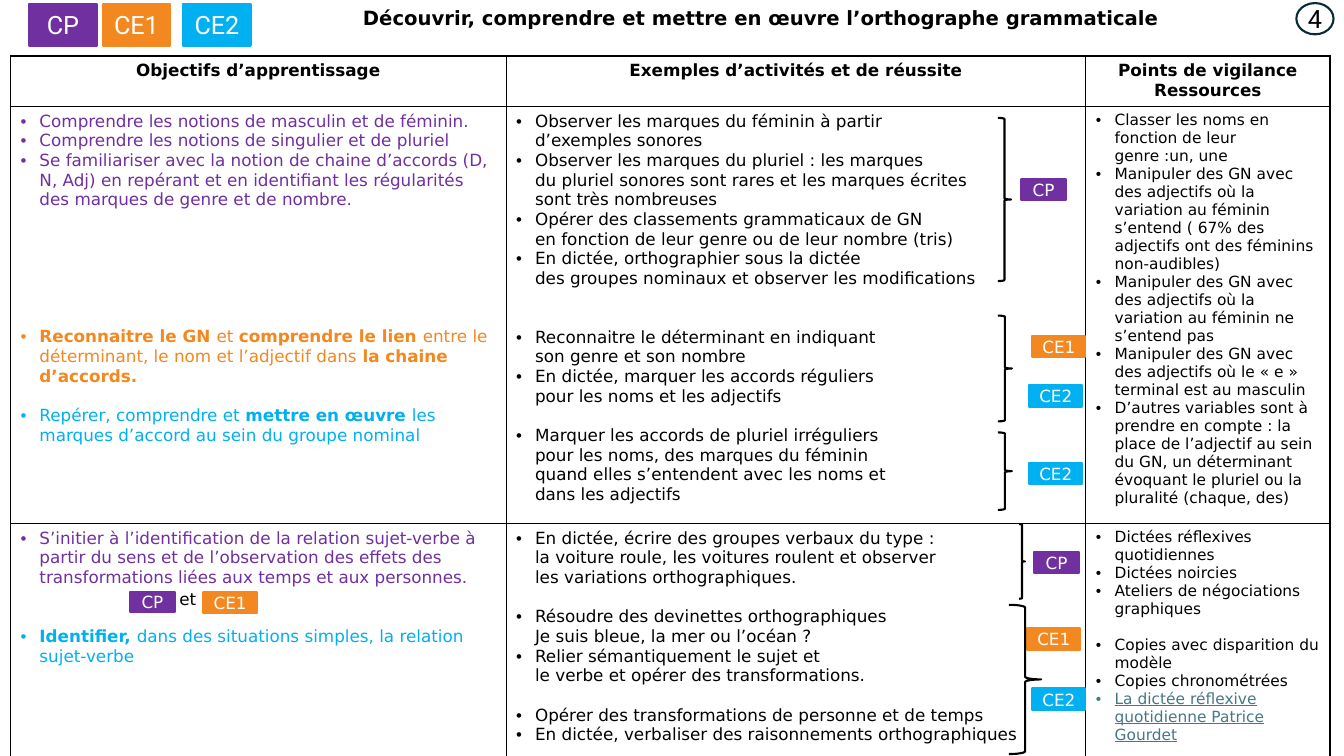
from lxml import etree
from pptx import Presentation
from pptx.dml.color import RGBColor
from pptx.enum.shapes import MSO_SHAPE
from pptx.enum.text import MSO_ANCHOR, MSO_AUTO_SIZE, PP_ALIGN
from pptx.oxml.ns import qn
from pptx.util import Pt

RECTANGLE, OVAL, BRACE = MSO_SHAPE.RECTANGLE, MSO_SHAPE.OVAL, MSO_SHAPE.RIGHT_BRACE
TOP, MIDDLE = MSO_ANCHOR.TOP, MSO_ANCHOR.MIDDLE
CENTER, LEFT = PP_ALIGN.CENTER, PP_ALIGN.LEFT
NO_AUTOFIT = MSO_AUTO_SIZE.NONE

BLACK = RGBColor(0x00, 0x00, 0x00)
WHITE = RGBColor(0xFF, 0xFF, 0xFF)
PURPLE = RGBColor(0x70, 0x30, 0xA0)
ORANGE = RGBColor(0xF2, 0x88, 0x1F)
BLUE = RGBColor(0x00, 0xB0, 0xF0)
NAVY = RGBColor(0x09, 0x2A, 0x39)
LINK = RGBColor(0x46, 0x78, 0x86)

BODY_FONT, TAG_FONT = "DejaVu Sans", "Roboto"
LINE_RATIO = 1.164
HANG = 13.5
GRADES = {"CP": PURPLE, "CE1": ORANGE, "CE2": BLUE}
COLUMNS = [354, 414, 174.5]
ROWS = [36, 298, 168.5]
HEADERS = ["Objectifs d’apprentissage", "Exemples d’activités et de réussite",
           "Points de vigilance\nRessources"]

# Each item is (text, colour, blank lines above); ** switches bold, \n breaks the line.
CELLS = [
    [
        [("Comprendre les notions de masculin et de féminin.", PURPLE, 0),
         ("Comprendre les notions de singulier et de pluriel", PURPLE, 0),
         ("Se familiariser avec la notion de chaine d’accords (D, N, Adj) en repérant et en "
          "identifiant les régularités des marques de genre et de nombre.", PURPLE, 0),
         ("**Reconnaitre le GN **et **comprendre le lien **entre le déterminant, le nom et "
          "l’adjectif dans **la chaine d’accords.", ORANGE, 6),
         ("Repérer, comprendre et **mettre en œuvre **les marques d’accord au sein du groupe "
          "nominal", BLUE, 1)],
        [("Observer les marques du féminin à partir\nd’exemples sonores", BLACK, 0),
         ("Observer les marques du pluriel : les marques\ndu pluriel sonores sont rares et les "
          "marques écrites\nsont très nombreuses", BLACK, 0),
         ("Opérer des classements grammaticaux de GN\nen fonction de leur genre ou de leur "
          "nombre (tris)", BLACK, 0),
         ("En dictée, orthographier sous la dictée\ndes groupes nominaux et observer les "
          "modifications", BLACK, 0),
         ("Reconnaitre le déterminant en indiquant\nson genre et son nombre", BLACK, 2),
         ("En dictée, marquer les accords réguliers\npour les noms et les adjectifs", BLACK, 0),
         ("Marquer les accords de pluriel irréguliers\npour les noms, des marques du féminin\n"
          "quand elles s’entendent avec les noms et\ndans les adjectifs", BLACK, 1)],
        [("Classer les noms en fonction de leur genre :un, une", BLACK, 0),
         ("Manipuler des GN avec des adjectifs où la variation au féminin s’entend ( 67% des "
          "adjectifs ont des féminins non-audibles)", BLACK, 0),
         ("Manipuler des GN avec des adjectifs où la variation au féminin ne s’entend pas",
          BLACK, 0),
         ("Manipuler des GN avec des adjectifs où le « e » terminal est au masculin", BLACK, 0),
         ("D’autres variables sont à prendre en compte : la place de l’adjectif au sein du GN, "
          "un déterminant évoquant le pluriel ou la pluralité (chaque, des)", BLACK, 0)],
    ],
    [
        [("S’initier à l’identification de la relation sujet-verbe à partir du sens et de "
          "l’observation des effets des transformations liées aux temps et aux personnes.",
          PURPLE, 0),
         ("**Identifier, **dans des situations simples, la relation sujet-verbe", BLUE, 2)],
        [("En dictée, écrire des groupes verbaux du type :\nla voiture roule, les voitures "
          "roulent et observer\nles variations orthographiques.", BLACK, 0),
         ("Résoudre des devinettes orthographiques\nJe suis bleue, la mer ou l’océan ?",
          BLACK, 1),
         ("Relier sémantiquement le sujet et\nle verbe et opérer des transformations.",
          BLACK, 0),
         ("Opérer des transformations de personne et de temps", BLACK, 1),
         ("En dictée, verbaliser des raisonnements orthographiques", BLACK, 0)],
        [("Dictées réflexives quotidiennes", BLACK, 0),
         ("Dictées noircies", BLACK, 0),
         ("Ateliers de négociations graphiques", BLACK, 0),
         ("Copies avec disparition du modèle", BLACK, 1),
         ("Copies chronométrées", BLACK, 0),
         ("La dictée réflexive quotidienne Patrice Gourdet", LINK, 0)],
    ],
]

HEADER_TAGS = [("CP", 21), ("CE1", 73.5), ("CE2", 131)]
SMALL_TAGS = [("CE1", 737.3, 239.8), ("CE2", 735.1, 275), ("CP", 729.4, 128.2),
              ("CE2", 735.1, 330.5), ("CE1", 733.7, 448.5), ("CE2", 737.3, 491.8),
              ("CP", 92.9, 422.6), ("CE1", 145.4, 422.6), ("CP", 738.7, 394.6)]
BRACES = [(712.8, 84.2, 9.4, 116.6), (712.8, 225.4, 10, 75.6), (712.8, 308.9, 10, 55.4),
          (727.9, 374.4, 4.3, 53.3), (720.7, 432, 23, 106.6)]


def set_font(para, size, color, bold=None, name=BODY_FONT):
    """Set the font shared by all runs of a paragraph."""
    para.font.name = name
    para.font.size = Pt(size)
    para.font.color.rgb = color
    para.font.bold = bold


def add_bullet(para):
    """Give a paragraph a hanging round bullet."""
    props = para._p.get_or_add_pPr()
    props.set("marL", str(Pt(HANG)))
    props.set("indent", str(-Pt(HANG)))
    etree.SubElement(props, qn("a:buFont")).set("typeface", "Arial")
    etree.SubElement(props, qn("a:buChar")).set("char", "•")


def add_spans(para, text):
    """Write text with its line breaks and bold parts."""
    for part_number, part in enumerate(text.split("**")):
        for line_number, line in enumerate(part.split("\n")):
            if line_number:
                para.add_line_break()
            if line:
                span = para.add_run()
                span.text = line
                if "**" in text:
                    span.font.bold = part_number % 2 == 1


def fill_list(frame, items, size):
    """Fill a cell with bulleted items."""
    for number, (text, color, gap) in enumerate(items):
        para = frame.add_paragraph() if number else frame.paragraphs[0]
        if gap:
            para.space_before = Pt(round(gap * size * LINE_RATIO, 1))
        add_bullet(para)
        add_spans(para, text)
        set_font(para, size, color)
        if color == LINK:
            para.font.underline = True


def style_cell(cell):
    """Draw thin black borders around a clear cell."""
    props = cell._tc.get_or_add_tcPr()
    for side in ("a:lnL", "a:lnR", "a:lnT", "a:lnB"):
        border = etree.SubElement(props, qn(side), w=str(Pt(1)))
        fill = etree.SubElement(border, qn("a:solidFill"))
        etree.SubElement(fill, qn("a:srgbClr")).set("val", str(BLACK))
    cell.fill.background()


def add_grid(page):
    """Add the table of objectives, activities and resources."""
    table = page.shapes.add_table(len(ROWS), len(COLUMNS), Pt(7.5), Pt(40),
                                  Pt(sum(COLUMNS)), Pt(sum(ROWS))).table
    table.first_row = table.horz_banding = False
    for column, width in zip(table.columns, COLUMNS):
        column.width = Pt(width)
    for row, height in zip(table.rows, ROWS):
        row.height = Pt(height)
    for cell in table.iter_cells():
        style_cell(cell)
    for column, header in enumerate(HEADERS):
        frame = table.cell(0, column).text_frame
        frame.text = header
        for para in frame.paragraphs:
            para.alignment = CENTER
            set_font(para, 12, BLACK, True)
    for row, row_cells in enumerate(CELLS, 1):
        for column, items in enumerate(row_cells):
            fill_list(table.cell(row, column).text_frame, items, 11 if column == 2 else 12)


def add_outline(page, kind, left, top, width, height, color):
    """Add an unfilled shape with a coloured outline."""
    shape = page.shapes.add_shape(kind, Pt(left), Pt(top), Pt(width), Pt(height))
    shape.shadow.inherit = False
    shape.fill.background()
    shape.line.color.rgb = color
    shape.line.width = Pt(1.5)
    return shape


def add_label(shape, text, size, color, name):
    """Centre a short text in a shape."""
    frame = shape.text_frame
    frame.word_wrap = False
    frame.vertical_anchor = MIDDLE
    frame.margin_left = frame.margin_right = frame.margin_top = frame.margin_bottom = 0
    frame.text = text
    frame.paragraphs[0].alignment = CENTER
    set_font(frame.paragraphs[0], size, color, name=name)


def add_tag(page, grade, left, top, width, height, size, name):
    """Add the coloured tag of a school grade."""
    tag = add_outline(page, RECTANGLE, left, top, width, height, GRADES[grade])
    tag.fill.solid()
    tag.fill.fore_color.rgb = GRADES[grade]
    add_label(tag, grade, size, WHITE, name)


def place_text(box, text, left, top, width, height, size, align, bold=None):
    """Position a text box or placeholder and write its line."""
    box.left, box.top, box.width, box.height = Pt(left), Pt(top), Pt(width), Pt(height)
    frame = box.text_frame
    frame.word_wrap = True
    frame.auto_size = NO_AUTOFIT
    frame.vertical_anchor = TOP
    frame.text = text
    frame.paragraphs[0].alignment = align
    set_font(frame.paragraphs[0], size, BLACK, bold)


def main():
    """Build and save the slide."""
    deck = Presentation()
    deck.slide_width, deck.slide_height = Pt(960), Pt(540)
    page = deck.slides.add_slide(deck.slide_layouts[5])
    place_text(page.shapes.title,
               "Découvrir, comprendre et mettre en œuvre l’orthographe grammaticale",
               238.3, 0.7, 610.6, 41, 14, CENTER, True)
    add_grid(page)
    for grade, left in HEADER_TAGS:
        add_tag(page, grade, left, 3, 48, 29.5, 18, TAG_FONT)
    for grade, left, top in SMALL_TAGS:
        width, height = (32, 14.5) if grade == "CP" else (38, 15.5)
        add_tag(page, grade, left, top, width, height, 12, BODY_FONT)
    for brace in BRACES:
        add_outline(page, BRACE, *brace, BLACK)
    place_text(page.shapes.add_textbox(0, 0, 0, 0), "et", 121, 417, 27.4, 21.6, 12, LEFT)
    number = add_outline(page, OVAL, 926, 2.2, 26.6, 22.3, NAVY)
    add_label(number, "4", 18, BLACK, TAG_FONT)
    deck.save("out.pptx")


if __name__ == "__main__":
    main()
